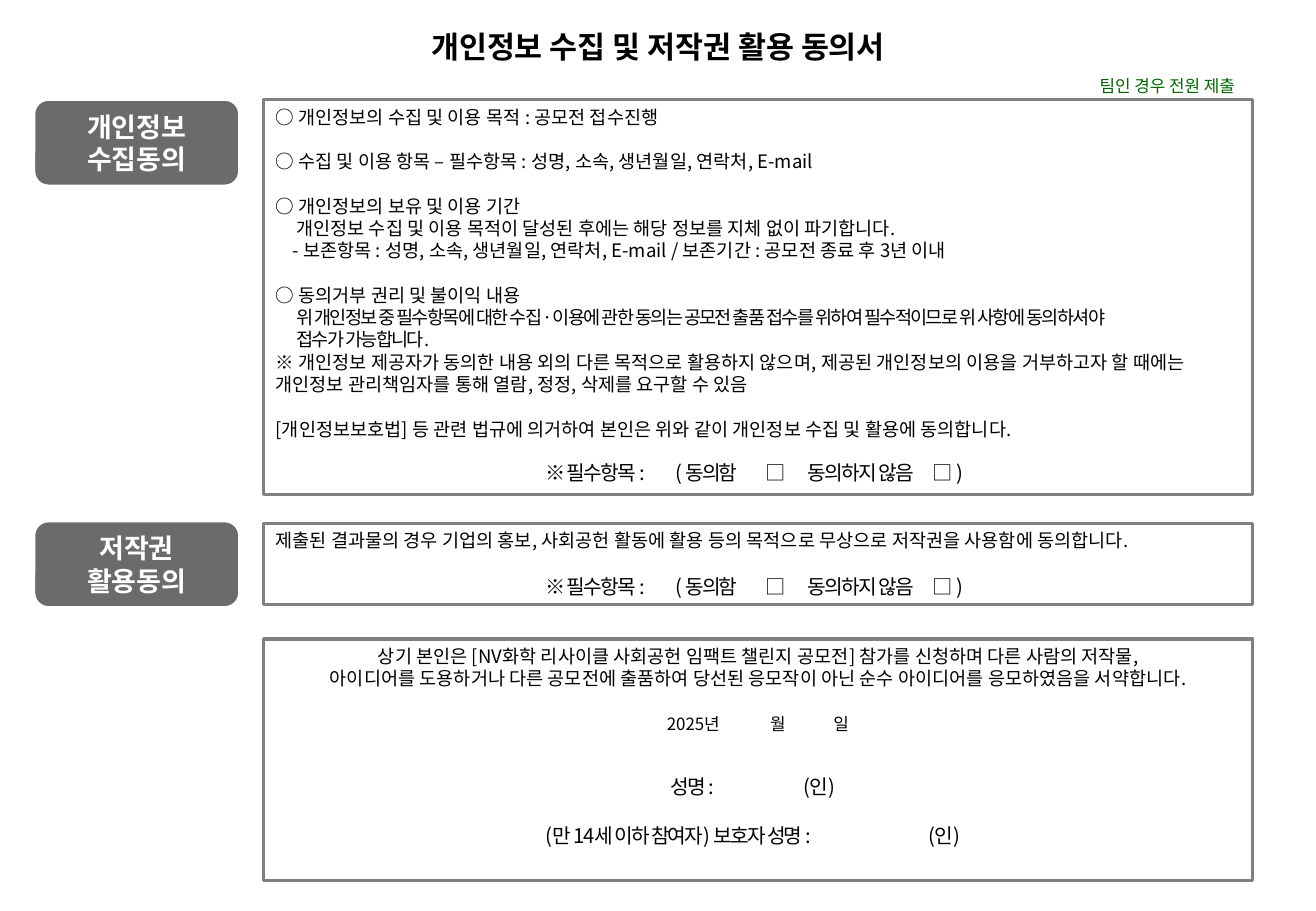
from dataclasses import dataclass

from lxml.etree import SubElement
from pptx import Presentation
from pptx.dml.color import RGBColor
from pptx.enum.shapes import MSO_SHAPE
from pptx.enum.text import MSO_ANCHOR, PP_ALIGN
from pptx.oxml.ns import qn
from pptx.util import Inches, Pt


@dataclass(frozen=True)
class Theme:
    ink: RGBColor = RGBColor(0, 0, 0)
    white: RGBColor = RGBColor(0xFF, 0xFF, 0xFF)
    badge: RGBColor = RGBColor(0x6B, 0x6B, 0x6B)
    frame: RGBColor = RGBColor(0x80, 0x80, 0x80)
    note: RGBColor = RGBColor(0, 0x66, 0)
    body_font: str = "Noto Sans CJK KR"
    badge_font: str = "Roboto"
    title_size: float = 18
    badge_size: float = 16
    form_size: float = 12
    body_size: float = 11
    small_size: float = 10
    line_pitch: float = 1.2


THEME = Theme()
BODY_GAP = THEME.body_size * THEME.line_pitch
FORM_GAP = THEME.form_size * THEME.line_pitch
SMALL_GAP = THEME.small_size * THEME.line_pitch

# Columns of the form
BADGE_LEFT, BADGE_WIDTH, BADGE_HEIGHT = 0.28, 1.69, 0.71
PANEL_LEFT, PANEL_WIDTH = 2.17, 8.14

# Statements: text and its paragraph format
PRIVACY_TERMS = [
    ("○ 개인정보의 수집 및 이용 목적 : 공모전 접수진행", {}),
    ("○ 수집 및 이용 항목 – 필수항목 : 성명, 소속, 생년월일, 연락처, E-mail", {"before": BODY_GAP}),
    ("○ 개인정보의 보유 및 이용 기간", {"before": BODY_GAP}),
    ("개인정보 수집 및 이용 목적이 달성된 후에는 해당 정보를 지체 없이 파기합니다.", {"indent": 0.17}),
    ("- 보존항목 : 성명, 소속, 생년월일, 연락처, E-mail / 보존기간 : 공모전 종료 후 3년 이내",
     {"indent": 0.14}),
    ("○ 동의거부 권리 및 불이익 내용", {"before": BODY_GAP}),
    ("위 개인정보 중 필수항목에 대한 수집·이용에 관한 동의는 공모전 출품 접수를 위하여 "
     "필수적이므로 위 사항에 동의하셔야", {"indent": 0.17, "tracking": -1}),
    ("접수가 가능합니다.", {"indent": 0.17, "tracking": -1}),
    ("※ 개인정보 제공자가 동의한 내용 외의 다른 목적으로 활용하지 않으며, 제공된 개인정보의 "
     "이용을 거부하고자 할 때에는 개인정보 관리책임자를 통해 열람, 정정, 삭제를 요구할 수 있음", {}),
    ("[개인정보보호법] 등 관련 법규에 의거하여 본인은 위와 같이 개인정보 수집 및 활용에 동의합니다.",
     {"before": BODY_GAP}),
]
COPYRIGHT_TERMS = [
    ("제출된 결과물의 경우 기업의 홍보, 사회공헌 활동에 활용 등의 목적으로 무상으로 저작권을 "
     "사용함에 동의합니다.", {}),
]
FORM_ROW = {"size": THEME.form_size, "tracking": -1}
PLEDGE = [
    ("상기 본인은 [NV화학 리사이클 사회공헌 임팩트 챌린지 공모전] 참가를 신청하며 다른 사람의 저작물,",
     {"align": PP_ALIGN.CENTER}),
    ("아이디어를 도용하거나 다른 공모전에 출품하여 당선된 응모작이 아닌 순수 아이디어를 "
     "응모하였음을 서약합니다.", {"align": PP_ALIGN.CENTER}),
    ("\t2025년\t월\t일",
     {"size": THEME.small_size, "before": FORM_GAP, "tabs": (3.22, 4.07, 4.59)}),
    ("\t성명 :\t(인)", {**FORM_ROW, "before": 2 * SMALL_GAP, "tabs": (3.25, 4.34)}),
    ("\t(만 14세 이하 참여자) 보호자 성명 :\t(인)",
     {**FORM_ROW, "before": FORM_GAP, "tabs": (2.22, 5.37)}),
]


def consent_row(before):
    """The line with the two tick boxes."""
    return ("\t※ 필수항목 :\t( 동의함\t□\t동의하지 않음\t□ )",
            {**FORM_ROW, "before": before, "tabs": (2.22, 3.29, 4.03, 4.38, 5.41)})


def write(paragraph, text, *, size=THEME.body_size, font=THEME.body_font,
          color=THEME.ink, bold=False, align=PP_ALIGN.LEFT, before=0,
          indent=0, tracking=0, tabs=()):
    paragraph.alignment = align
    paragraph.line_spacing = Pt(size * THEME.line_pitch)
    paragraph.space_before = Pt(before)
    properties = paragraph._p.get_or_add_pPr()
    if indent:
        properties.set("marL", str(Inches(indent)))
        properties.set("indent", "0")
    if tabs:
        stops = SubElement(properties, qn("a:tabLst"))
        for position in tabs:
            SubElement(stops, qn("a:tab"), pos=str(Inches(position)), algn="l")

    run = paragraph.add_run()
    run.text = text
    run.font.size = Pt(size)
    run.font.bold = bold
    run.font.color.rgb = color
    run.font.name = font
    run_properties = run._r.get_or_add_rPr()
    SubElement(run_properties, qn("a:ea"), typeface=font)
    if tracking:
        run_properties.set("spc", str(tracking * 100))


def write_all(frame, lines, **shared):
    frame.word_wrap = True
    for index, (text, form) in enumerate(lines):
        paragraph = frame.paragraphs[0] if index == 0 else frame.add_paragraph()
        write(paragraph, text, **{**shared, **form})


def add_badge(slide, top, *words):
    badge = slide.shapes.add_shape(
        MSO_SHAPE.ROUNDED_RECTANGLE, Inches(BADGE_LEFT), Inches(top),
        Inches(BADGE_WIDTH), Inches(BADGE_HEIGHT))
    badge.shadow.inherit = False
    badge.fill.solid()
    badge.fill.fore_color.rgb = THEME.badge
    badge.line.color.rgb = THEME.white
    badge.line.width = Pt(1.5)
    badge.text_frame.vertical_anchor = MSO_ANCHOR.MIDDLE
    write_all(badge.text_frame, [(word, {}) for word in words],
              size=THEME.badge_size, font=THEME.badge_font, color=THEME.white,
              bold=True, align=PP_ALIGN.CENTER)


def add_panel(slide, top, height, lines):
    panel = slide.shapes.add_shape(
        MSO_SHAPE.RECTANGLE, Inches(PANEL_LEFT), Inches(top),
        Inches(PANEL_WIDTH), Inches(height))
    panel.shadow.inherit = False
    panel.fill.background()
    panel.line.color.rgb = THEME.frame
    panel.line.width = Pt(2)
    panel.text_frame.vertical_anchor = MSO_ANCHOR.TOP
    write_all(panel.text_frame, lines)


def add_label(slide, box, text, inset=True, **form):
    frame = slide.shapes.add_textbox(*map(Inches, box)).text_frame
    if not inset:
        frame.margin_left = frame.margin_right = 0
        frame.margin_top = frame.margin_bottom = 0
    write_all(frame, [(text, form)])


def build_consent_form(slide):
    # Privacy consent
    add_badge(slide, 0.82, "개인정보", "수집동의")
    add_panel(slide, 0.82, 3.25, PRIVACY_TERMS + [consent_row(SMALL_GAP)])
    # Copyright consent
    add_badge(slide, 4.29, "저작권", "활용동의")
    add_panel(slide, 4.31, 0.67, COPYRIGHT_TERMS + [consent_row(BODY_GAP)])
    # Pledge and signatures
    add_panel(slide, 5.26, 1.99, PLEDGE)
    # Heading and note
    add_label(slide, (0.81, 0.18, 9.21, 0.4), "개인정보 수집 및 저작권 활용 동의서",
              size=THEME.title_size, bold=True, align=PP_ALIGN.CENTER)
    add_label(slide, (9.05, 0.62, 1.45, 0.17), "팀인 경우 전원 제출", inset=False,
              size=THEME.small_size, color=THEME.note)


def main():
    presentation = Presentation()
    presentation.slide_width = Inches(10.83)
    presentation.slide_height = Inches(7.5)
    build_consent_form(presentation.slides.add_slide(presentation.slide_layouts[6]))
    presentation.save("out.pptx")


if __name__ == "__main__":
    main()
